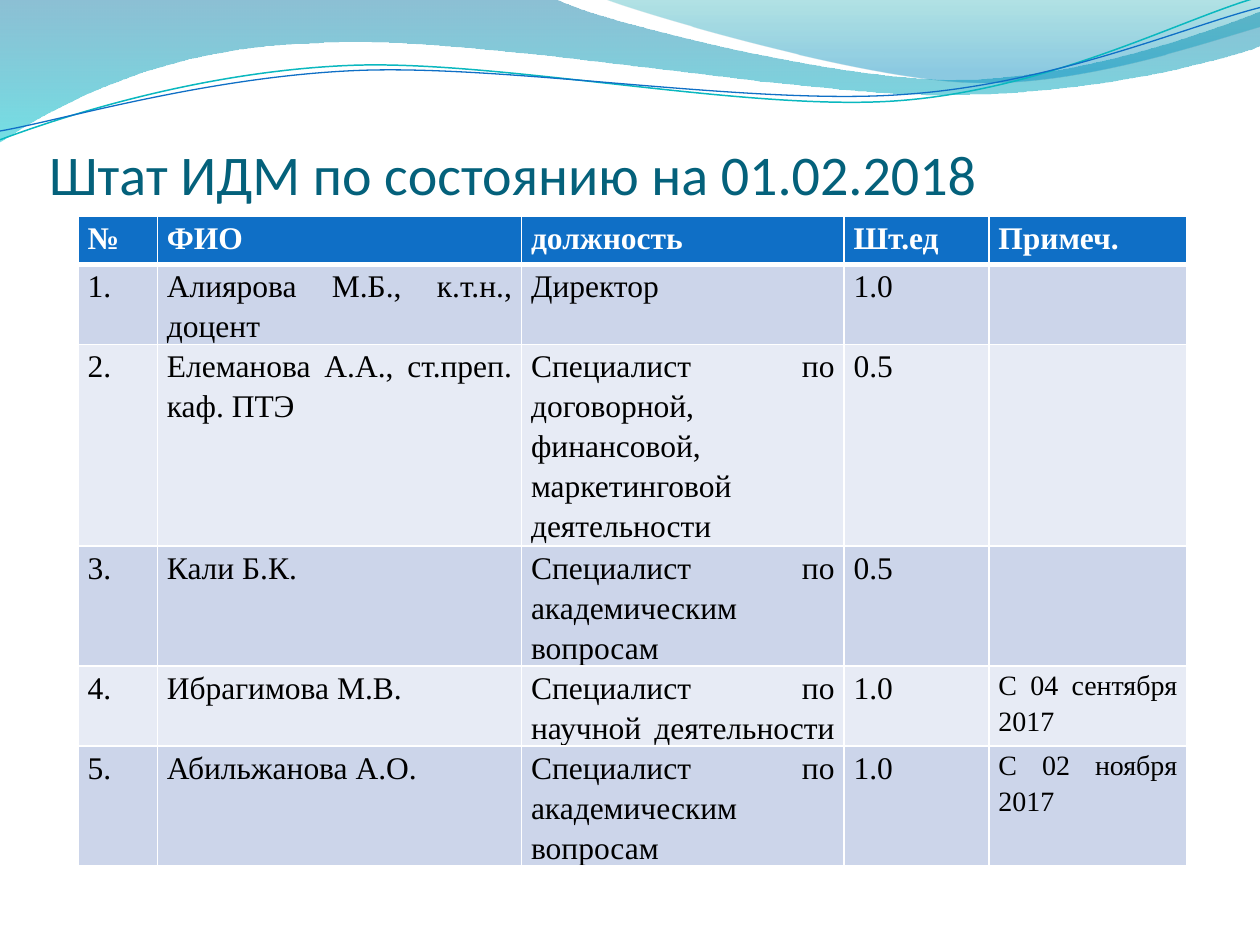
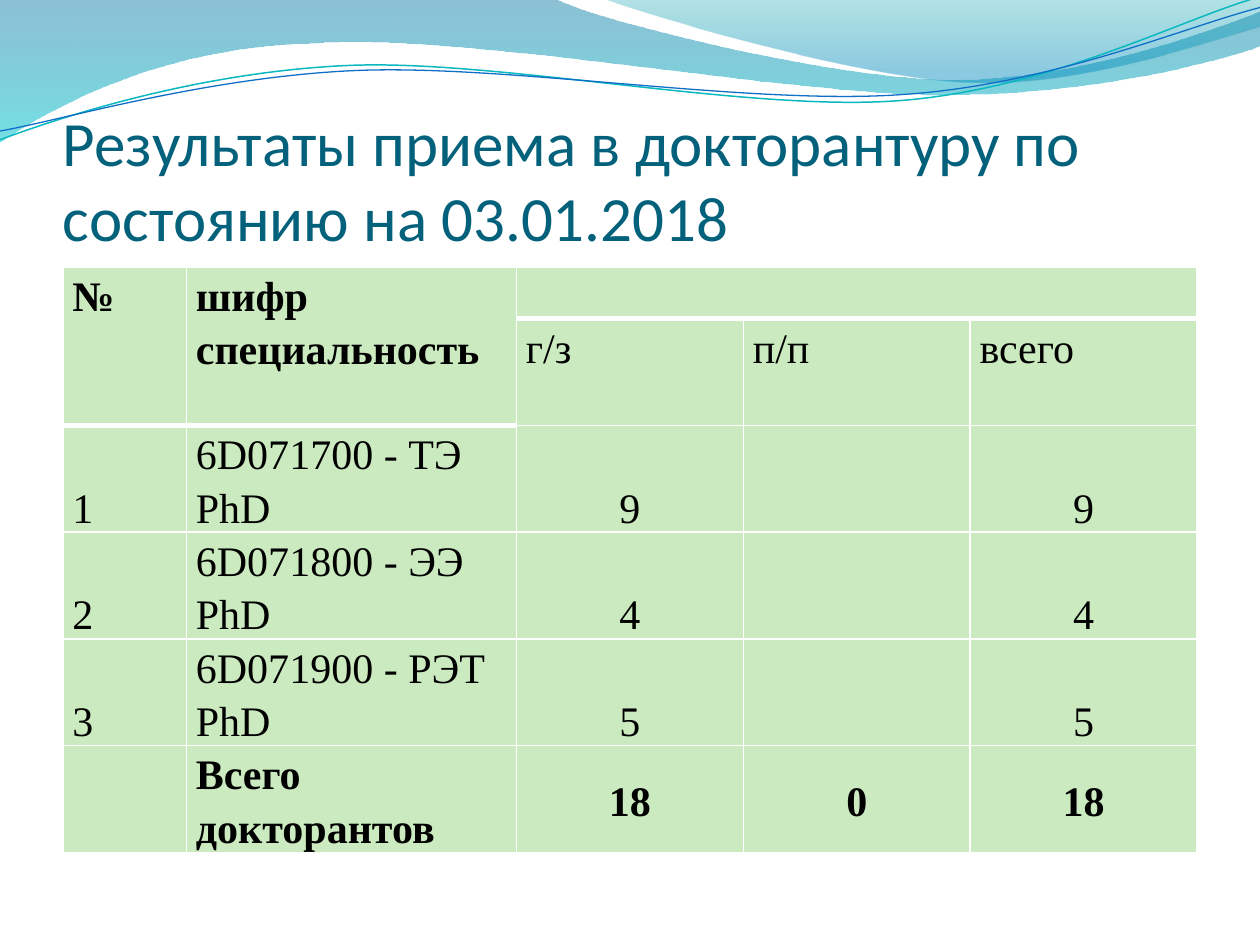
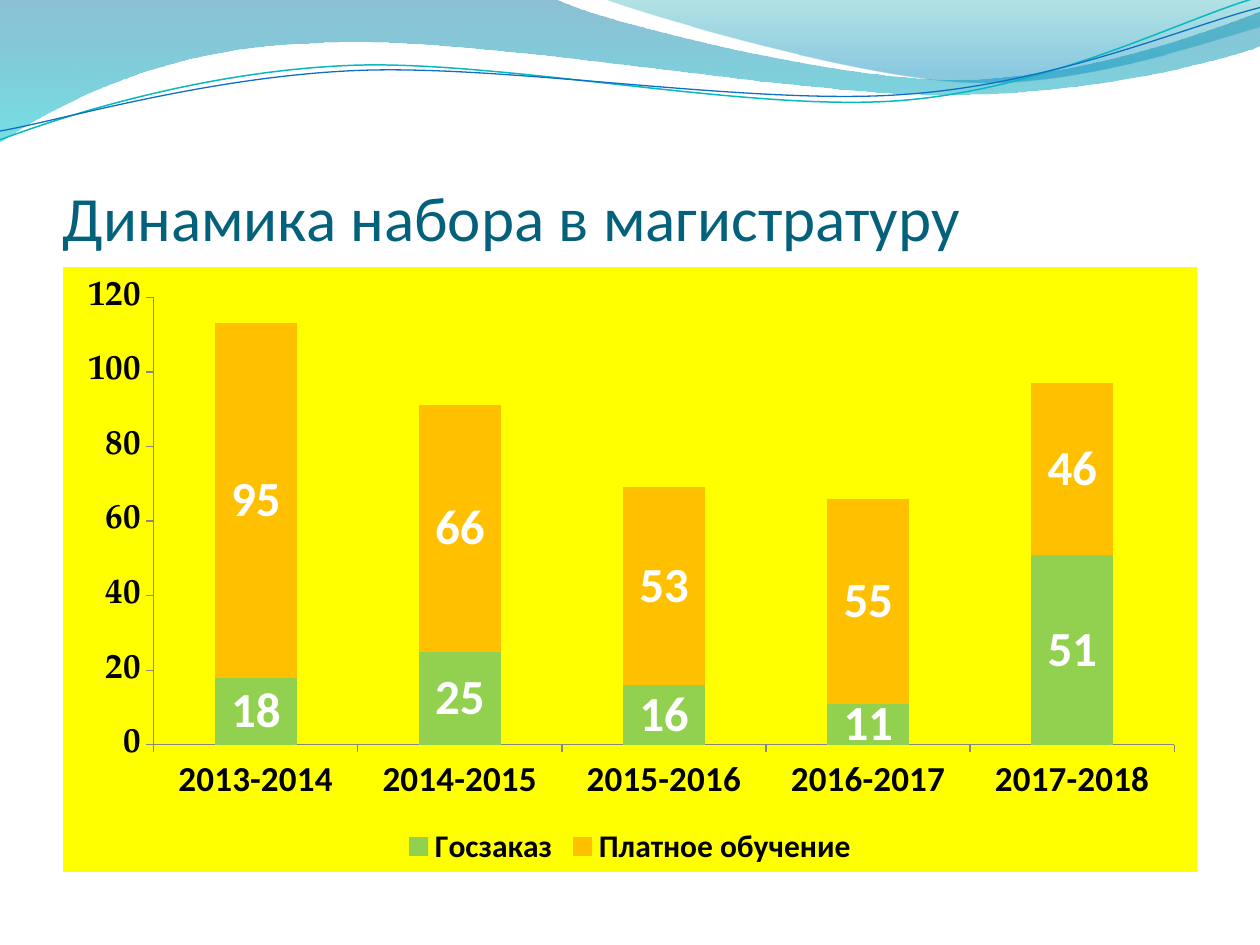
"""Build three slides on institute staff, doctoral admission and master's enrolment."""

from collections.abc import Callable
from dataclasses import dataclass, replace
from typing import NamedTuple

from lxml import etree
from pptx import Presentation
from pptx.chart.chart import Chart
from pptx.chart.data import CategoryChartData
from pptx.dml.color import RGBColor
from pptx.enum.chart import XL_CHART_TYPE, XL_LEGEND_POSITION
from pptx.enum.text import MSO_ANCHOR, PP_ALIGN
from pptx.oxml import parse_xml
from pptx.oxml.ns import nsdecls, qn
from pptx.shapes.autoshape import Shape
from pptx.slide import Slide
from pptx.table import Table, _Cell
from pptx.text.text import Font
from pptx.util import Emu, Pt

EMU_PER_PX = 9144
LINE_PITCH = 1.27
CELL_INSET = Pt(5.4)

WHITE, BLACK, AXIS_GRAY = "FFFFFF", "000000", "868686"
TITLE_BLUE, HEADER_BLUE = "04617B", "0F6FC6"
ROW_DARK, ROW_LIGHT = "CCD5EA", "E7EBF5"
PALE_GREEN, YELLOW = "CBEAC0", "FFFF00"
SANS, SERIF, AXIS_SERIF = "Calibri", "Times New Roman", "TeX Gyre Pagella"

Point = tuple[int, int]


class Box(NamedTuple):
    """Place of an element in px."""

    left: int
    top: int
    width: int
    height: int


class Stop(NamedTuple):
    """Gradient stop with its opacity in percent."""

    position: float
    color: str
    opacity: int


@dataclass(frozen=True)
class Wave:
    """Outline whose segments are lines (one point) or cubic curves (three points)."""

    start: Point
    segments: tuple[tuple[Point, ...], ...]
    stops: tuple[Stop, ...] = ()
    line_color: str = ""
    line_width: float = 0


@dataclass(frozen=True)
class CellStyle:
    """Look of one table cell."""

    fill: str
    size: int
    color: str = BLACK
    bold: bool = False
    align: PP_ALIGN = PP_ALIGN.JUSTIFY
    anchor: MSO_ANCHOR = MSO_ANCHOR.TOP


class Enrolment(NamedTuple):
    """One series of the enrolment chart."""

    funding: str
    students: tuple[int, ...]
    color: str


WAVES = (
    Wave(
        (0, 0),
        (
            ((440, -1),),
            ((476, 17), (664, 63), (758, 63)),
            ((853, 63), (958, 26), (1000, 9)),
            ((1001, 36),),
            ((983, 44), (870, 76), (746, 75)),
            ((622, 75), (382, 28), (257, 34)),
            ((129, 36), (46, 83), (-1, 113)),
        ),
        stops=(Stop(0, "0074A1", 45), Stop(1, "00C6CF", 55)),
    ),
    Wave(
        (479, -1),
        (
            ((509, 11), (682, 62), (769, 65)),
            ((856, 69), (961, 32), (1000, 21)),
            ((1000, 0),),
        ),
        stops=(Stop(0, "00A1A9", 30), Stop(0.8, "008BBF", 45)),
    ),
    Wave(
        (0, 111),
        (
            ((48, 93), (158, 57), (277, 52)),
            ((395, 47), (593, 89), (713, 80)),
            ((833, 71), (938, 15), (998, -2)),
        ),
        line_color="0AB8BF",
        line_width=0.85,
    ),
    Wave(
        (0, 104),
        (
            ((47, 96), (164, 61), (283, 56)),
            ((403, 51), (597, 84), (717, 75)),
            ((836, 67), (941, 21), (1000, 6)),
        ),
        line_color=HEADER_BLUE,
        line_width=0.75,
    ),
)

STAFF_ROWS = (
    ("№", "ФИО", "должность", "Шт.ед", "Примеч."),
    ("1.", "Алиярова М.Б., к.т.н., доцент", "Директор", "1.0", ""),
    (
        "2.",
        "Елеманова А.А., ст.преп. каф. ПТЭ",
        "Специалист по договорной, финансовой, маркетинговой деятельности",
        "0.5",
        "",
    ),
    ("3.", "Кали Б.К.", "Специалист по академическим вопросам", "0.5", ""),
    ("4.", "Ибрагимова М.В.", "Специалист по научной деятельности ", "1.0", "C 04 сентября 2017"),
    ("5.", "Абильжанова А.О.", "Специалист по академическим вопросам", "1.0", "С 02 ноября 2017"),
)

ADMISSION_ROWS = (
    ("№", "шифр\nспециальность", "", "", ""),
    ("", "", "г/з", "п/п", "всего"),
    ("1", "6D071700 - ТЭ PhD", "9", "", "9"),
    ("2", "6D071800 - ЭЭ PhD", "4", "", "4"),
    ("3", "6D071900 - РЭТ PhD", "5", "", "5"),
    ("", "Всего докторантов", "18", "0", "18"),
)

YEARS = ("2013-2014", "2014-2015", "2015-2016", "2016-2017", "2017-2018")
ENROLMENTS = (
    Enrolment("Госзаказ", (18, 25, 16, 11, 51), "92D050"),
    Enrolment("Платное обучение", (95, 66, 53, 55, 46), "FFC000"),
)


def px(length: int) -> Emu:
    """Turn px into EMU."""
    return Emu(length * EMU_PER_PX)


def rgb(color: str) -> RGBColor:
    """Turn a hex string into a colour."""
    return RGBColor.from_string(color)


def set_font(font: Font, name: str, size: int, color: str = BLACK, bold: bool = False) -> None:
    """Set the face, size, colour and weight of a font."""
    font.name, font.size, font.bold = name, Pt(size), bold
    font.color.rgb = rgb(color)


def bend(shape: Shape, wave: Wave) -> None:
    """Turn each run of three straight steps that stands for a curve into that curve."""
    steps = iter(list(shape.element.iter(qn("a:lnTo"))))
    for segment in wave.segments:
        first, *others = [next(steps) for _ in segment]
        if others:
            curve = etree.Element(qn("a:cubicBezTo"))
            first.addprevious(curve)
            for step in (first, *others):
                curve.append(step[0])
                step.getparent().remove(step)


def draw_wave(slide: Slide, wave: Wave) -> None:
    """Draw a gradient band or a thin curve."""
    builder = slide.shapes.build_freeform(*map(px, wave.start))
    points = [(px(x), px(y)) for segment in wave.segments for x, y in segment]
    builder.add_line_segments(points, close=bool(wave.stops))
    shape = builder.convert_to_shape()
    bend(shape, wave)
    shape.shadow.inherit = False
    if not wave.stops:
        shape.fill.background()
        shape.line.color.rgb = rgb(wave.line_color)
        shape.line.width = Pt(wave.line_width)
        return
    shape.fill.gradient()
    shape.fill.gradient_angle = 270
    for gradient_stop, stop in zip(shape.fill.gradient_stops, wave.stops):
        gradient_stop.position = stop.position
        gradient_stop.color.rgb = rgb(stop.color)
    for color, stop in zip(shape.element.iter(qn("a:srgbClr")), wave.stops):
        etree.SubElement(color, qn("a:alpha")).set("val", str(stop.opacity * 1000))
    shape.line.fill.background()


def add_titled_slide(
    prs: Presentation, title: str, box: Box = Box(50, 77, 900, 125), size: int = 36
) -> Slide:
    """Add a slide with the waves and a title."""
    slide = prs.slides.add_slide(prs.slide_layouts[6])
    for wave in WAVES:
        draw_wave(slide, wave)
    frame = slide.shapes.add_textbox(*map(px, box)).text_frame
    frame.word_wrap = True
    frame.vertical_anchor = MSO_ANCHOR.BOTTOM
    frame.margin_left = frame.margin_right = frame.margin_bottom = 0
    frame.margin_top = px(5)
    frame.text = title
    set_font(frame.paragraphs[0].runs[0].font, SANS, size, TITLE_BLUE)
    return slide


def write_cell(cell: _Cell, text: str, style: CellStyle) -> None:
    """Fill a table cell and format its text."""
    cell.fill.solid()
    cell.fill.fore_color.rgb = rgb(style.fill)
    cell.margin_left = cell.margin_right = CELL_INSET
    cell.margin_top = cell.margin_bottom = 0
    cell.vertical_anchor = style.anchor
    cell.text_frame.text = text
    for paragraph in cell.text_frame.paragraphs:
        paragraph.alignment = style.align
        paragraph.line_spacing = Pt(style.size * LINE_PITCH)
        for run in paragraph.runs:
            set_font(run.font, SERIF, style.size, style.color, style.bold)


def underline_header(cell: _Cell) -> None:
    """Give a header cell its thick white bottom border."""
    border = parse_xml(
        f'<a:lnB {nsdecls("a")} w="{Pt(3)}"><a:solidFill><a:srgbClr val="{WHITE}"/>'
        "</a:solidFill></a:lnB>"
    )
    cell._tc.get_or_add_tcPr().insert(0, border)


def add_grid(
    slide: Slide, left: int, top: int, widths: tuple[int, ...], heights: tuple[int, ...]
) -> Table:
    """Add an empty table with the given columns and rows."""
    box = Box(left, top, sum(widths), sum(heights))
    table = slide.shapes.add_table(len(heights), len(widths), *map(px, box)).table
    table.horz_banding = False
    for column, width in zip(table.columns, widths):
        column.width = px(width)
    for row, height in zip(table.rows, heights):
        row.height = px(height)
    return table


def staff_style(row: int, column: int) -> CellStyle:
    """Return the look of a staff cell."""
    if row == 0:
        return CellStyle(HEADER_BLUE, 18, WHITE, bold=True)
    style = CellStyle(ROW_DARK if row % 2 else ROW_LIGHT, 18)
    return replace(style, size=16) if column == 4 else style


def admission_style(row: int, column: int) -> CellStyle:
    """Return the look of an admission cell."""
    style = CellStyle(PALE_GREEN, 24, bold=row in (0, 5))
    if row < 2:
        return style
    anchor = MSO_ANCHOR.MIDDLE if row == 5 else MSO_ANCHOR.BOTTOM
    aligns = (PP_ALIGN.JUSTIFY, PP_ALIGN.LEFT)
    align = aligns[column] if column < 2 else PP_ALIGN.CENTER
    return replace(style, anchor=anchor, align=align)


def fill_grid(
    table: Table, rows: tuple[tuple[str, ...], ...], style_of: Callable[[int, int], CellStyle]
) -> None:
    """Write all rows into a table and underline the first."""
    for row, texts in enumerate(rows):
        for column, text in enumerate(texts):
            write_cell(table.cell(row, column), text, style_of(row, column))
    for column in range(len(rows[0])):
        underline_header(table.cell(0, column))


def build_staff(prs: Presentation) -> None:
    """Build the staff slide."""
    slide = add_titled_slide(
        prs, "Штат ИДМ по состоянию на 01.02.2018", Box(39, 39, 900, 125), 32
    )
    staff = add_grid(slide, 62, 172, (63, 289, 256, 115, 157), (38, 63, 160, 95, 63, 95))
    fill_grid(staff, STAFF_ROWS, staff_style)


def build_admission(prs: Presentation) -> None:
    """Build the doctoral admission slide."""
    slide = add_titled_slide(prs, "Результаты приема в докторантуру по состоянию на 03.01.2018")
    admission = add_grid(slide, 50, 212, (98, 262, *[180] * 3), (41, *[84] * 5))
    fill_grid(admission, ADMISSION_ROWS, admission_style)
    for first, last in (((0, 0), (1, 0)), ((0, 1), (1, 1)), ((0, 2), (0, 4))):
        admission.cell(*first).merge(admission.cell(*last))


def set_chart_area(chart: Chart, color: str) -> None:
    """Colour the chart background and place the plot inside it."""
    chart_space = chart.element
    background = parse_xml(
        f'<c:spPr {nsdecls("c", "a")}><a:solidFill><a:srgbClr val="{color}"/></a:solidFill>'
        "<a:ln><a:noFill/></a:ln></c:spPr>"
    )
    chart_space.find(qn("c:chart")).addnext(background)
    plot_area = next(chart_space.iter(qn("c:plotArea")))
    for layout in plot_area.findall(qn("c:layout")):
        plot_area.remove(layout)
    plot_area.insert(0, parse_xml(
        f'<c:layout {nsdecls("c")}><c:manualLayout><c:layoutTarget val="inner"/>'
        '<c:xMode val="edge"/><c:yMode val="edge"/><c:x val="0.08"/><c:y val="0.05"/>'
        '<c:w val="0.9"/><c:h val="0.74"/></c:manualLayout></c:layout>'
    ))


def build_enrolment(prs: Presentation) -> None:
    """Build the master's enrolment slide."""
    slide = add_titled_slide(prs, "Динамика набора в магистратуру")
    data = CategoryChartData(number_format="0")
    data.categories = YEARS
    for enrolment in ENROLMENTS:
        data.add_series(enrolment.funding, enrolment.students)
    box = Box(50, 212, 900, 480)
    chart = slide.shapes.add_chart(XL_CHART_TYPE.COLUMN_STACKED, *map(px, box), data).chart
    chart.has_title = False
    set_font(chart.font, AXIS_SERIF, 10)
    set_chart_area(chart, YELLOW)

    chart.has_legend = True
    chart.legend.position = XL_LEGEND_POSITION.BOTTOM
    chart.legend.include_in_layout = False
    set_font(chart.legend.font, SANS, 18, bold=True)

    students = chart.value_axis
    students.has_major_gridlines = False
    students.minimum_scale, students.maximum_scale, students.major_unit = 0, 120, 20
    students.tick_labels.number_format = "0"
    students.tick_labels.number_format_is_linked = False
    for axis, face in ((chart.category_axis, SANS), (students, AXIS_SERIF)):
        set_font(axis.tick_labels.font, face, 20, bold=True)
        axis.format.line.color.rgb = rgb(AXIS_GRAY)
        axis.format.line.width = Pt(0.75)

    plot = chart.plots[0]
    plot.vary_by_categories = False
    plot.gap_width, plot.overlap = 150, 100
    for series, enrolment in zip(plot.series, ENROLMENTS):
        series.format.fill.solid()
        series.format.fill.fore_color.rgb = rgb(enrolment.color)
        labels = series.data_labels
        labels.show_value = True
        labels.number_format, labels.number_format_is_linked = "0", False
        set_font(labels.font, SANS, 28, WHITE, bold=True)


def main() -> None:
    """Build and save the presentation."""
    prs = Presentation()
    prs.slide_width, prs.slide_height = px(1000), px(750)
    build_staff(prs)
    build_admission(prs)
    build_enrolment(prs)
    prs.save("out.pptx")


if __name__ == "__main__":
    main()
